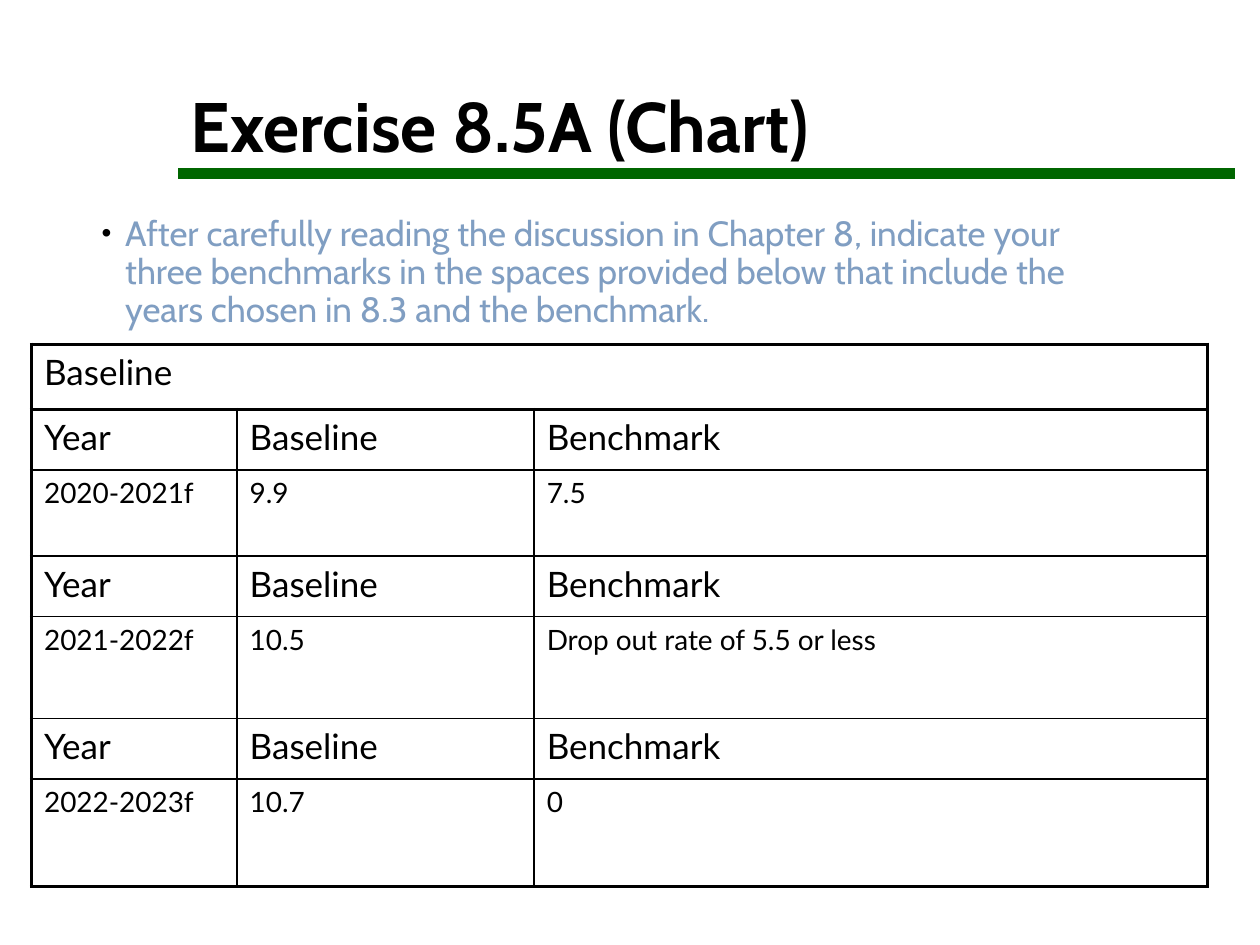
from lxml.etree import SubElement
from pptx import Presentation
from pptx.dml.color import RGBColor
from pptx.enum.shapes import MSO_CONNECTOR
from pptx.enum.text import MSO_ANCHOR
from pptx.oxml.ns import qn
from pptx.util import Pt

COLORS = {"ink": "000000", "rule": "006600", "prompt": "809EC2"}
THICK, THIN = 2.25, 1
HEADINGS = ["Year", "Baseline", "Benchmark"]
BENCHMARKS = [
    ["2020-2021f", "9.9", "7.5"],
    ["2021-2022f", "10.5", "Drop out rate of 5.5 or less"],
    ["2022-2023f", "10.7", "0"],
]
PROMPT = (
    "After carefully reading the discussion in Chapter 8, indicate your three "
    "benchmarks in the spaces provided below that include the years chosen in "
    "8.3 and the benchmark."
)


def rgb(name):
    return RGBColor.from_string(COLORS[name])


def style_text(para, font_name, size, color, bold=False):
    for span in para.runs:
        span.font.name = font_name
        span.font.size = Pt(size)
        span.font.bold = bold
        span.font.color.rgb = rgb(color)


def add_text(page, left, top, width, height, text):
    box = page.shapes.add_textbox(Pt(left), Pt(top), Pt(width), Pt(height))
    box.text_frame.word_wrap = True
    para = box.text_frame.paragraphs[0]
    para.text = text
    para.line_spacing = 0.9
    return box, para


def add_title(page, left, top, width, height):
    box, para = add_text(page, left, top, width, height, "Exercise 8.5A (Chart)")
    box.text_frame.vertical_anchor = MSO_ANCHOR.BOTTOM
    style_text(para, "Cabin", 40, "ink", bold=True)
    bottom = top + height
    rule = page.shapes.add_connector(
        MSO_CONNECTOR.STRAIGHT, Pt(left), Pt(bottom), Pt(left + width), Pt(bottom)
    )
    rule.line.color.rgb = rgb("rule")
    rule.line.width = Pt(6)
    SubElement(rule._element.spPr, qn("a:effectLst"))


def add_prompt(page, left, top, width, height):
    box, para = add_text(page, left, top, width, height, PROMPT)
    properties = para._p.get_or_add_pPr()
    properties.set("marL", str(Pt(16.5)))
    properties.set("indent", str(Pt(-13.5)))
    bullet_color = SubElement(properties, qn("a:buClr"))
    SubElement(bullet_color, qn("a:srgbClr"), val=COLORS["ink"])
    SubElement(properties, qn("a:buSzPct"), val="80000")
    SubElement(properties, qn("a:buFont"), typeface="Arial")
    SubElement(properties, qn("a:buChar"), char="•")
    style_text(para, "Cabin", 20, "prompt")


def set_borders(cell, widths):
    properties = cell._tc.get_or_add_tcPr()
    for position, (side, width) in enumerate(zip(("lnL", "lnR", "lnT", "lnB"), widths)):
        line = properties.makeelement(qn(f"a:{side}"), {"w": str(Pt(width))})
        fill = SubElement(line, qn("a:solidFill"))
        SubElement(fill, qn("a:srgbClr"), val=COLORS["ink"])
        properties.insert(position, line)


def add_grid(page, left, top, column_widths, row_heights, rows, sizes):
    last_row, last_column = len(rows) - 1, len(column_widths) - 1
    frame = page.shapes.add_table(
        len(rows), len(column_widths), Pt(left), Pt(top),
        Pt(sum(column_widths)), Pt(sum(row_heights)),
    )
    table = frame.table
    table.first_row = False
    table.horz_banding = False
    for column, width in zip(table.columns, column_widths):
        column.width = Pt(width)
    for r, (values, height, size) in enumerate(zip(rows, row_heights, sizes)):
        table.rows[r].height = Pt(height)
        for c, value in enumerate(values):
            cell = table.cell(r, c)
            cell.text_frame.text = value
            cell.fill.background()
            style_text(cell.text_frame.paragraphs[0], "Lato", size, "ink")
            outer = (c == 0, c == last_column, r == 0, r == last_row)
            set_borders(cell, [THICK if edge else THIN for edge in outer])


def add_benchmarks(page, left, top, width):
    banner_height, heading_height = 37.25, 34.6
    rows, heights = [], []
    for values, height in zip(BENCHMARKS, [49.2, 58.3, 61.5]):
        rows += [HEADINGS, values]
        heights += [heading_height, height]
    columns = [117.5, 169.75]
    columns.append(width - sum(columns))
    add_grid(page, left, top + banner_height, columns, heights, rows, [20, 16] * 3)
    add_grid(page, left, top, [width], [banner_height], [["Baseline"]], [20])


def main():
    deck = Presentation()
    deck.slide_width, deck.slide_height = Pt(720), Pt(540)
    page = deck.slides.add_slide(deck.slide_layouts[6])
    add_title(page, 102, 18, 604, 81.25)
    add_prompt(page, 48, 120, 604, 74)
    add_benchmarks(page, 18, 196.75, 672)
    deck.save("out.pptx")


if __name__ == "__main__":
    main()
